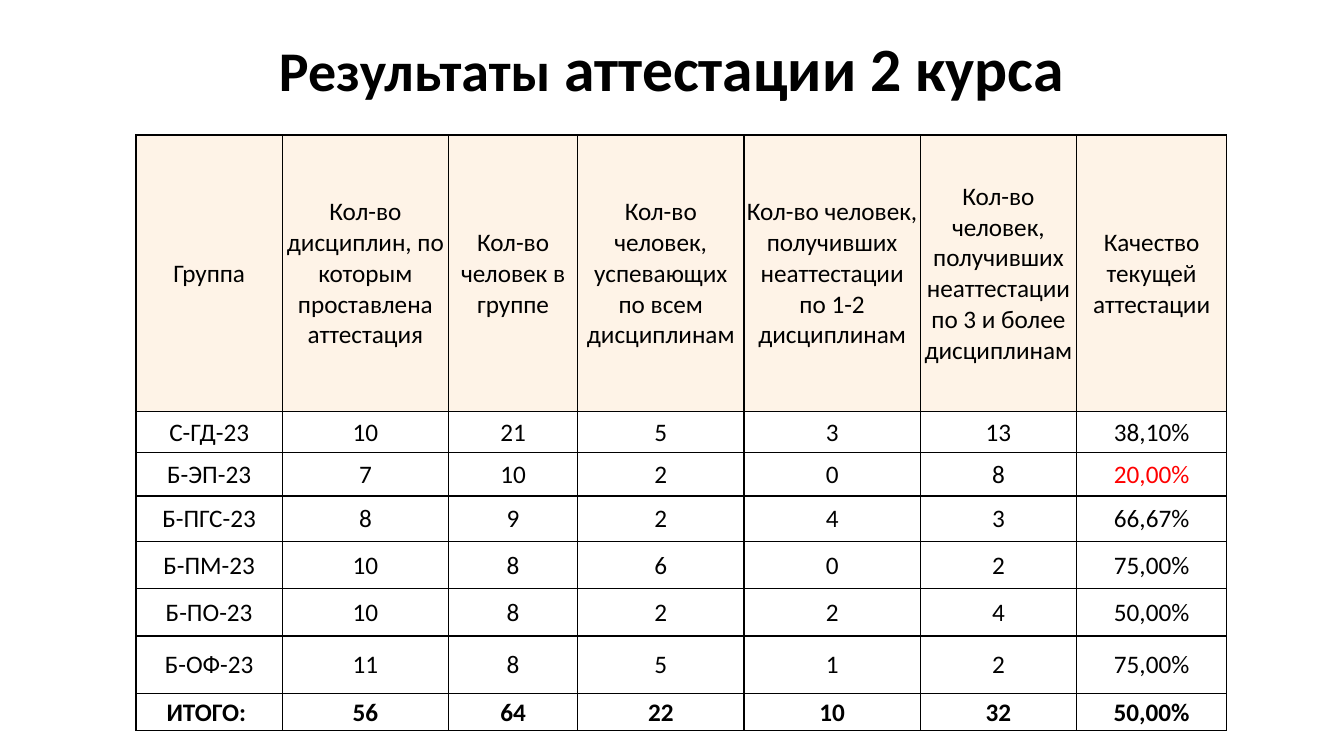
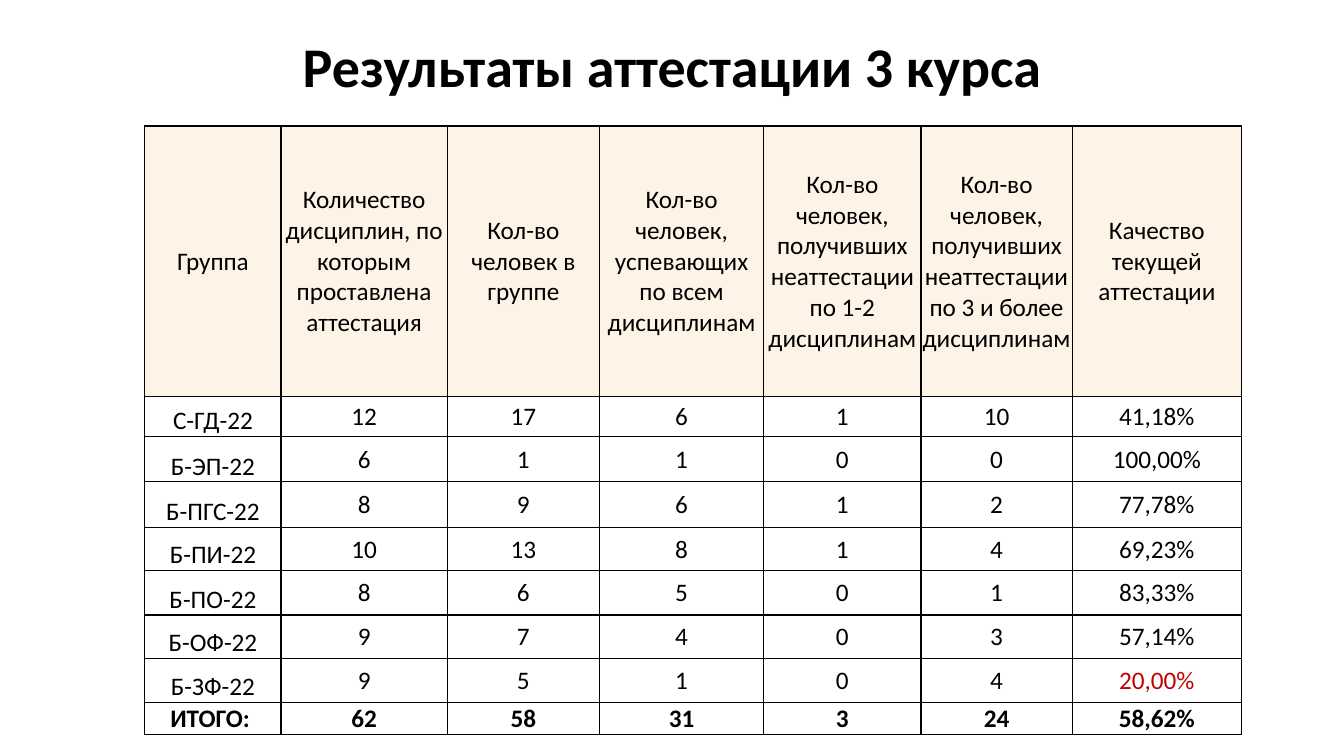
from dataclasses import dataclass

from lxml import etree
from pptx import Presentation
from pptx.dml.color import RGBColor
from pptx.enum import text
from pptx.oxml import ns
from pptx.util import Pt


@dataclass(frozen=True)
class Theme:
    font: str = "Calibri"
    ink: str = "000000"
    header_fill: str = "FEF3E7"
    title_size: int = 40
    title_large: int = 44
    table_size: int = 18
    border_width: int = 1
    cell_margin: float = 0.72


THEME = Theme()


def add_text(paragraph, content, *, size=THEME.table_size, bold=False, color=THEME.ink):
    """Append one centred, formatted run to the paragraph."""
    paragraph.alignment = text.PP_ALIGN.CENTER
    run = paragraph.add_run()
    run.text = content
    run.font.name = THEME.font
    run.font.size = Pt(size)
    run.font.bold = bold
    run.font.color.rgb = RGBColor.from_string(color)


def add_borders(cell):
    properties = cell._tc.get_or_add_tcPr()
    for side in ("a:lnL", "a:lnR", "a:lnT", "a:lnB"):
        line = etree.SubElement(properties, ns.qn(side), w=str(Pt(THEME.border_width)))
        fill = etree.SubElement(line, ns.qn("a:solidFill"))
        etree.SubElement(fill, ns.qn("a:srgbClr"), val=THEME.ink)


def_headings = [
    "Кол-во человек в группе",
    "Кол-во человек, успевающих по всем дисциплинам",
    "Кол-во человек, получивших неаттестации по 1-2 дисциплинам",
    "Кол-во человек, получивших неаттестации по 3 и более дисциплинам",
    "Качество текущей аттестации",
]

courses = [
    {
        "title": [("Результаты", THEME.title_size), (" аттестации 2 курса", THEME.title_large)],
        "title_top": 10.8,
        "table_at": (97.2, 96.5),
        "widths": [104.4, 118.8, 92.2, 118.8, 126, 111.6, 107.3],
        "heights": [197.3, 29.5, 31, 32.4, 33.8, 33.8, 41, 26.6],
        "disciplines": "Кол-во дисциплин, по которым проставлена аттестация",
        "group_anchor": text.MSO_ANCHOR.MIDDLE,
        "low_quality": ("20,00%", "FF0000"),
        "results": [
            ("С-ГД-23", 10, 21, 5, 3, 13, "38,10%"),
            ("Б-ЭП-23", 7, 10, 2, 0, 8, "20,00%"),
            ("Б-ПГС-23", 8, 9, 2, 4, 3, "66,67%"),
            ("Б-ПМ-23", 10, 8, 6, 0, 2, "75,00%"),
            ("Б-ПО-23", 10, 8, 2, 2, 4, "50,00%"),
            ("Б-ОФ-23", 11, 8, 5, 1, 2, "75,00%"),
            ("ИТОГО: ", 56, 64, 22, 10, 32, "50,00%"),
        ],
    },
    {
        "title": [("Результаты аттестации 3 курса", THEME.title_size)],
        "title_top": 9.4,
        "table_at": (103.5, 90),
        "widths": [97.2, 118.8, 108.7, 117.4, 112.3, 108, 121],
        "heights": [193, 28.8, 32.4, 32.4, 31, 31.7, 31, 31.7, 20.9],
        "disciplines": "Количество дисциплин, по которым проставлена аттестация",
        "group_anchor": text.MSO_ANCHOR.BOTTOM,
        "low_quality": ("20,00%", "C00000"),
        "results": [
            ("С-ГД-22", 12, 17, 6, 1, 10, "41,18%"),
            ("Б-ЭП-22", 6, 1, 1, 0, 0, "100,00%"),
            ("Б-ПГС-22", 8, 9, 6, 1, 2, "77,78%"),
            ("Б-ПИ-22", 10, 13, 8, 1, 4, "69,23%"),
            ("Б-ПО-22", 8, 6, 5, 0, 1, "83,33%"),
            ("Б-ОФ-22", 9, 7, 4, 0, 3, "57,14%"),
            ("Б-ЗФ-22", 9, 5, 1, 0, 4, "20,00%"),
            ("ИТОГО: ", 62, 58, 31, 3, 24, "58,62%"),
        ],
    },
]

deck = Presentation()
deck.slide_width, deck.slide_height = Pt(960), Pt(540)
title_only = deck.slide_layouts[5]

for course in courses:
    slide = deck.slides.add_slide(title_only)

    title = slide.shapes.title
    title.left, title.top = Pt(66), Pt(course["title_top"])
    title.width, title.height = Pt(828), Pt(80)
    title.text_frame.auto_size = text.MSO_AUTO_SIZE.NONE
    title.text_frame.vertical_anchor = text.MSO_ANCHOR.MIDDLE
    heading = title.text_frame.paragraphs[0]
    heading.line_spacing = 0.9
    for words, size in course["title"]:
        add_text(heading, words, size=size, bold=True)

    widths, heights = course["widths"], course["heights"]
    left, top = course["table_at"]
    results = slide.shapes.add_table(
        len(heights), len(widths), Pt(left), Pt(top), Pt(sum(widths)), Pt(sum(heights))
    ).table
    results.first_row = results.horz_banding = False
    for column, width in zip(results.columns, widths):
        column.width = Pt(width)
    for row, height in zip(results.rows, heights):
        row.height = Pt(height)

    low_value, low_color = course["low_quality"]
    lines = [("Группа", course["disciplines"], *def_headings), *course["results"]]
    for r, line in enumerate(lines):
        is_header, is_total = r == 0, r == len(lines) - 1
        for c, value in enumerate(line):
            cell = results.cell(r, c)
            cell.margin_left = cell.margin_right = cell.margin_top = Pt(THEME.cell_margin)
            cell.margin_bottom = Pt(0)
            is_group = c == 0 and not is_header
            cell.vertical_anchor = course["group_anchor"] if is_group else text.MSO_ANCHOR.MIDDLE
            add_borders(cell)
            if is_header:
                cell.fill.solid()
                cell.fill.fore_color.rgb = RGBColor.from_string(THEME.header_fill)
            else:
                cell.fill.background()
            add_text(
                cell.text_frame.paragraphs[0],
                str(value),
                bold=is_total,
                color=low_color if value == low_value else THEME.ink,
            )

deck.save("out.pptx")
